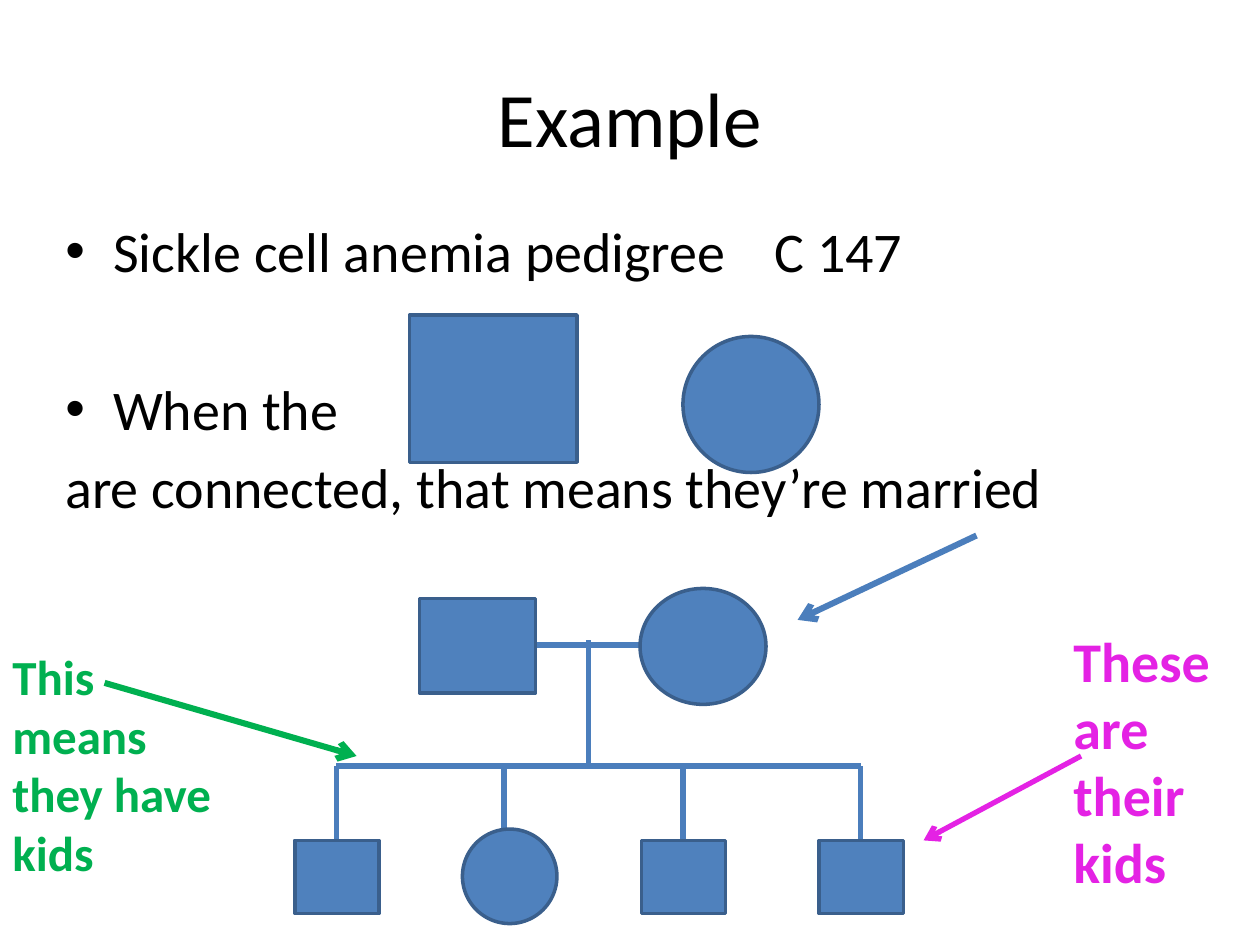
"""Build a slide that explains marriage and children in a pedigree chart."""
from lxml.etree import SubElement
from pptx import Presentation
from pptx.dml.color import RGBColor
from pptx.enum.shapes import MSO_CONNECTOR, MSO_SHAPE
from pptx.enum.text import MSO_ANCHOR, MSO_AUTO_SIZE, PP_ALIGN
from pptx.oxml.ns import qn
from pptx.util import Inches, Pt

BLACK = RGBColor(0x00, 0x00, 0x00)
BLUE = RGBColor(0x4F, 0x81, 0xBD)
OUTLINE = RGBColor(0x3A, 0x5F, 0x8C)
LINE_BLUE = RGBColor(0x4B, 0x7E, 0xBC)
GREEN = RGBColor(0x00, 0xB0, 0x50)
MAGENTA = RGBColor(0xE4, 0x22, 0xE4)


def write_text(paragraph, text, size, color=BLACK, bold=False):
    run = paragraph.add_run()
    run.text = text
    font_format = {"name": "Calibri", "size": Pt(size), "bold": bold}
    for attribute, value in font_format.items():
        setattr(run.font, attribute, value)
    run.font.color.rgb = color


def add_line(slide, start, end, color=LINE_BLUE, width=3, arrow=False):
    points = [Inches(value) for value in (*start, *end)]
    connector = slide.shapes.add_connector(MSO_CONNECTOR.STRAIGHT, *points)
    connector.line.color.rgb = color
    connector.line.width = Pt(width)
    if arrow:
        SubElement(connector.line._get_or_add_ln(), qn("a:tailEnd"), type="arrow")
    SubElement(connector._element.spPr, qn("a:effectLst"))


presentation = Presentation()
presentation.slide_width = Inches(10)
presentation.slide_height = Inches(7.5)
slide = presentation.slides.add_slide(presentation.slide_layouts[5])

title = slide.shapes.title
title_place = {"left": 0.5, "top": 0.3, "width": 9, "height": 1.25}
for attribute, value in title_place.items():
    setattr(title, attribute, Inches(value))
title.text_frame.vertical_anchor = MSO_ANCHOR.MIDDLE
title_paragraph = title.text_frame.paragraphs[0]
title_paragraph.alignment = PP_ALIGN.CENTER
write_text(title_paragraph, "Example", 44)

body = slide.shapes.add_textbox(Inches(0.42), Inches(1.67), Inches(9), Inches(4.95))
body.text_frame.word_wrap = True
body_lines = [
    ("Sickle cell anemia pedigree\tC 147", 6.4, True),
    ("When the", 51.8, True),
    ("are connected, that means they’re married", 6.4, False),
]
for index, (text, space_before, bulleted) in enumerate(body_lines):
    frame = body.text_frame
    paragraph = frame.add_paragraph() if index else frame.paragraphs[0]
    paragraph.space_before = Pt(space_before)
    properties = paragraph._p.get_or_add_pPr()
    properties.set("marL", str(Inches(0.38)))
    properties.set("indent", str(Inches(-0.38)))
    if bulleted:
        SubElement(properties, qn("a:buFont"), typeface="Arial")
        SubElement(properties, qn("a:buChar"), char="•")
    else:
        SubElement(properties, qn("a:buNone"))
    if "\t" in text:
        tab_stops = SubElement(properties, qn("a:tabLst"))
        SubElement(tab_stops, qn("a:tab"), pos=str(Inches(5.63)), algn="l")
    write_text(paragraph, text, 32)

CHILD_CENTERS = [2.67, 4, 5.42, 6.83]
SIBLING_Y = 6.08
CHILD_TOP = 6.67

add_line(slide, (4.25, 5.12), (5.08, 5.12), width=3.25)
add_line(slide, (4.67, 5.08), (4.67, SIBLING_Y))
add_line(slide, (CHILD_CENTERS[0], SIBLING_Y), (CHILD_CENTERS[-1], SIBLING_Y))
for center in CHILD_CENTERS:
    add_line(slide, (center, SIBLING_Y), (center, CHILD_TOP))

people = [
    (MSO_SHAPE.OVAL, 5.42, 2.67, 1.08, 1.08),
    (MSO_SHAPE.RECTANGLE, 3.25, 2.5, 1.33, 1.17),
    (MSO_SHAPE.RECTANGLE, 3.33, 4.75, 0.92, 0.75),
    (MSO_SHAPE.OVAL, 5.08, 4.67, 1, 0.92),
    (MSO_SHAPE.OVAL, 3.67, 6.58, 0.75, 0.75),
]
for center in CHILD_CENTERS[:1] + CHILD_CENTERS[2:]:
    people.append((MSO_SHAPE.RECTANGLE, center - 0.33, CHILD_TOP, 0.67, 0.58))
for kind, *place in people:
    shape = slide.shapes.add_shape(kind, *[Inches(value) for value in place])
    shape.shadow.inherit = False
    shape.fill.solid()
    shape.fill.fore_color.rgb = BLUE
    shape.line.color.rgb = OUTLINE
    shape.line.width = Pt(2)

add_line(slide, (7.75, 4.25), (6.33, 4.92), width=3.5, arrow=True)
add_line(slide, (0.83, 5.42), (2.83, 6), GREEN, 3.5, arrow=True)
add_line(slide, (8.58, 6), (7.33, 6.67), MAGENTA, arrow=True)

notes = [
    ("This means they have kids", 28, GREEN, (0, 5.08, 1.83, 1.99)),
    ("These are their kids", 32, MAGENTA, (8.42, 4.92, 1.58, 2.26)),
]
for text, size, color, place in notes:
    note = slide.shapes.add_textbox(*[Inches(value) for value in place])
    note.text_frame.word_wrap = True
    note.text_frame.auto_size = MSO_AUTO_SIZE.SHAPE_TO_FIT_TEXT
    write_text(note.text_frame.paragraphs[0], text, size, color, bold=True)

presentation.save("out.pptx")
